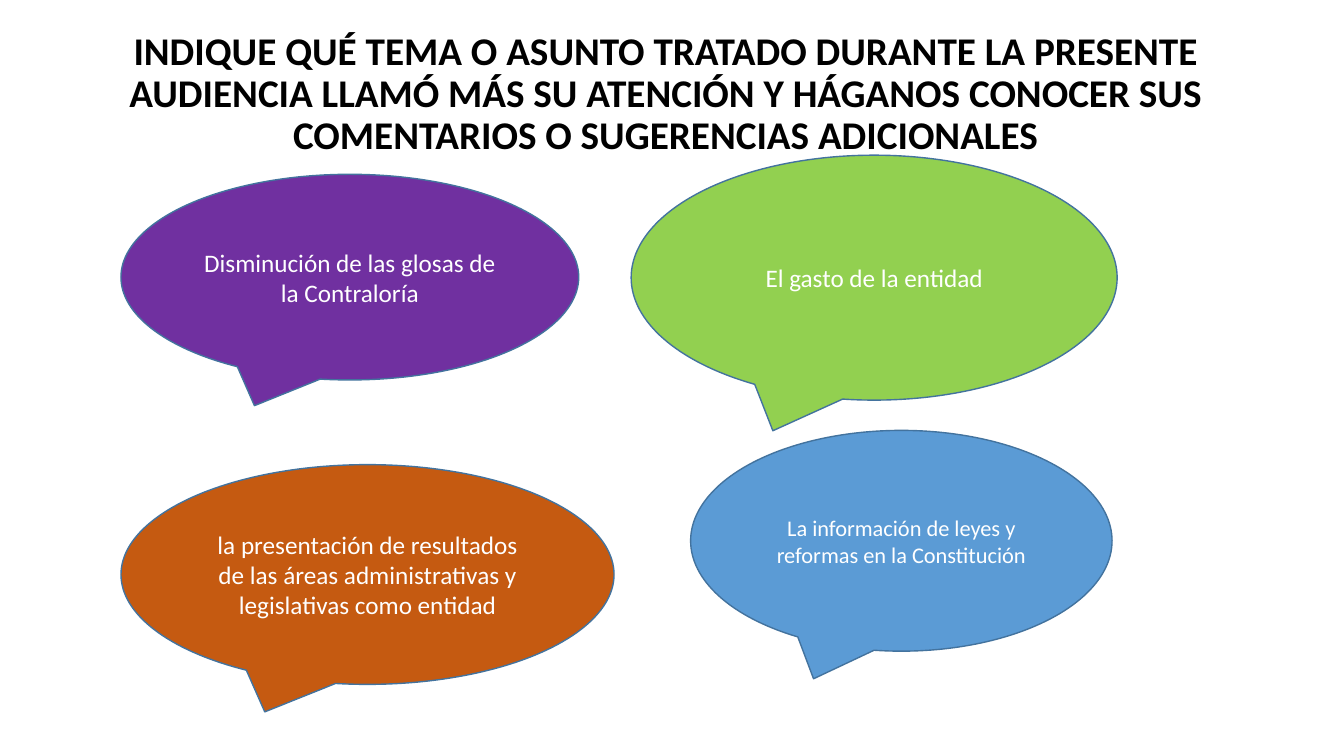
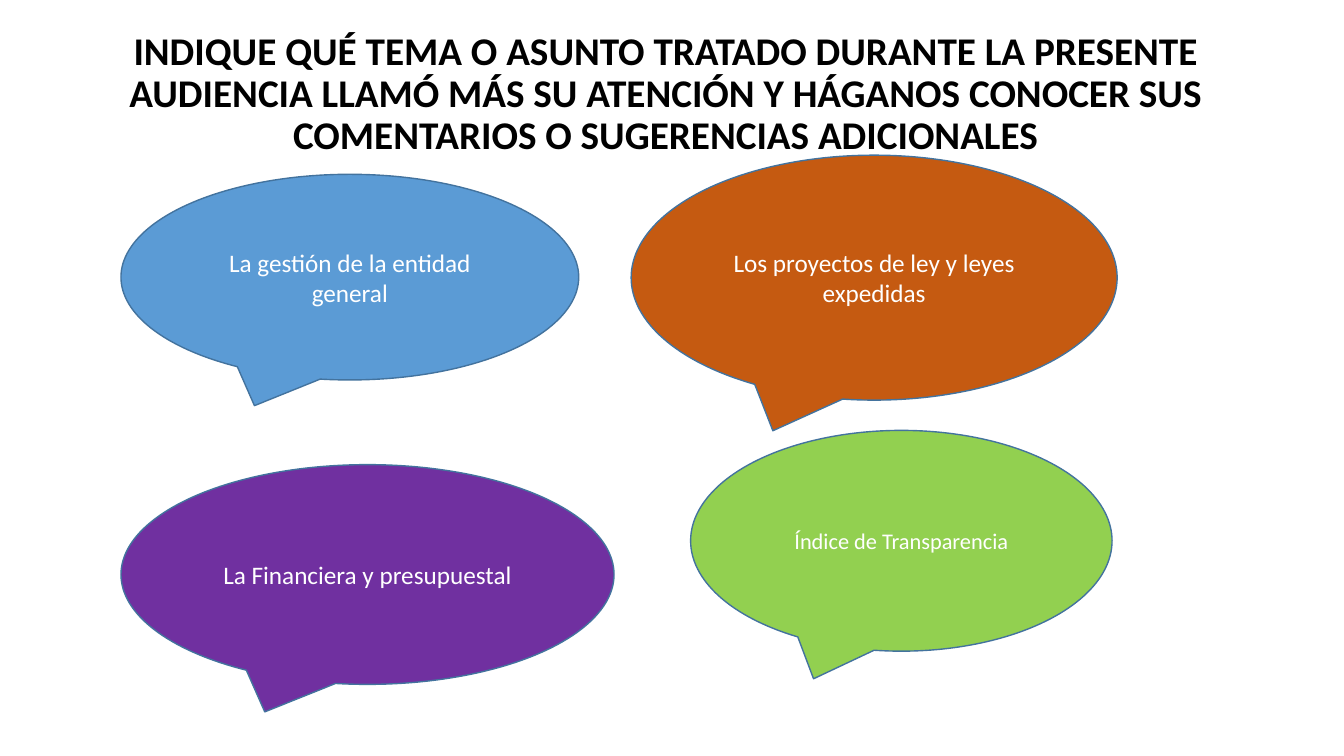
from pptx import Presentation
from pptx.dml.color import RGBColor
from pptx.enum.shapes import MSO_SHAPE
from pptx.enum.text import MSO_ANCHOR, MSO_AUTO_SIZE, PP_ALIGN
from pptx.util import Inches, Pt

PURPLE, GREEN, ORANGE, BLUE = "7030A0", "92D050", "C55A11", "5B9BD5"

QUESTION = (
    "INDIQUE QUÉ TEMA O ASUNTO TRATADO DURANTE LA PRESENTE AUDIENCIA "
    "LLAMÓ MÁS SU ATENCIÓN Y HÁGANOS CONOCER SUS COMENTARIOS O "
    "SUGERENCIAS ADICIONALES"
)

CALLOUT_SPOTS = [
    ((1.2, 1.73, 4.54, 2.04), 18),
    ((6.26, 1.54, 4.82, 2.43), 18),
    ((1.2, 4.61, 4.89, 2.18), 18),
    ((6.85, 4.27, 4.18, 2.19), 16),
]

ANSWERS = [
    [
        ("Disminución de las glosas de la Contraloría", PURPLE),
        ("El gasto de la entidad", GREEN),
        ("la presentación de resultados de las áreas administrativas y "
         "legislativas como entidad", ORANGE),
        ("La información de leyes y reformas en la Constitución", BLUE),
    ],
    [
        ("La gestión de la entidad general", BLUE),
        ("Los proyectos de ley y leyes expedidas", ORANGE),
        ("La Financiera y presupuestal", PURPLE),
        ("Índice de Transparencia", GREEN),
    ],
]


def color(value):
    return RGBColor.from_string(value)


class Deck:
    FONT = "Calibri"
    TITLE_COLOR = "000000"
    CALLOUT_TEXT = "FFFFFF"
    OUTLINE = "43739E"

    def __init__(self):
        self.presentation = Presentation()
        self.presentation.slide_width = Inches(13.33)
        self.presentation.slide_height = Inches(7.5)
        self.slide = None

    def add_slide(self):
        title_only = self.presentation.slide_layouts[5]
        self.slide = self.presentation.slides.add_slide(title_only)

    def set_text(self, shape, text, size, text_color, anchor, bold=False):
        frame = shape.text_frame
        frame.text = text
        frame.word_wrap = True
        frame.auto_size = MSO_AUTO_SIZE.NONE
        frame.vertical_anchor = anchor
        paragraph = frame.paragraphs[0]
        paragraph.alignment = PP_ALIGN.CENTER
        font = paragraph.runs[0].font
        font.name = self.FONT
        font.size = Pt(size)
        font.bold = bold
        font.color.rgb = color(text_color)
        return paragraph

    def title(self, text):
        heading = self.slide.shapes.title
        heading.left, heading.top = Inches(0.85), Inches(0.54)
        heading.width, heading.height = Inches(11.5), Inches(1.08)
        paragraph = self.set_text(heading, text, 28, self.TITLE_COLOR,
                                  MSO_ANCHOR.BOTTOM, bold=True)
        paragraph.line_spacing = 0.9
        paragraph.space_before = Pt(0)

    def callout(self, text, fill, place, size):
        bubble = self.slide.shapes.add_shape(
            MSO_SHAPE.OVAL_CALLOUT, *(Inches(length) for length in place))
        bubble.shadow.inherit = False
        bubble.fill.solid()
        bubble.fill.fore_color.rgb = color(fill)
        bubble.line.color.rgb = color(self.OUTLINE)
        bubble.line.width = Pt(1)
        self.set_text(bubble, text, size, self.CALLOUT_TEXT,
                      MSO_ANCHOR.MIDDLE)


def main():
    deck = Deck()
    for slide_answers in ANSWERS:
        deck.add_slide()
        deck.title(QUESTION)
        for (answer, fill), (place, size) in zip(slide_answers, CALLOUT_SPOTS):
            deck.callout(answer, fill, place, size)
    deck.presentation.save("out.pptx")


if __name__ == "__main__":
    main()
